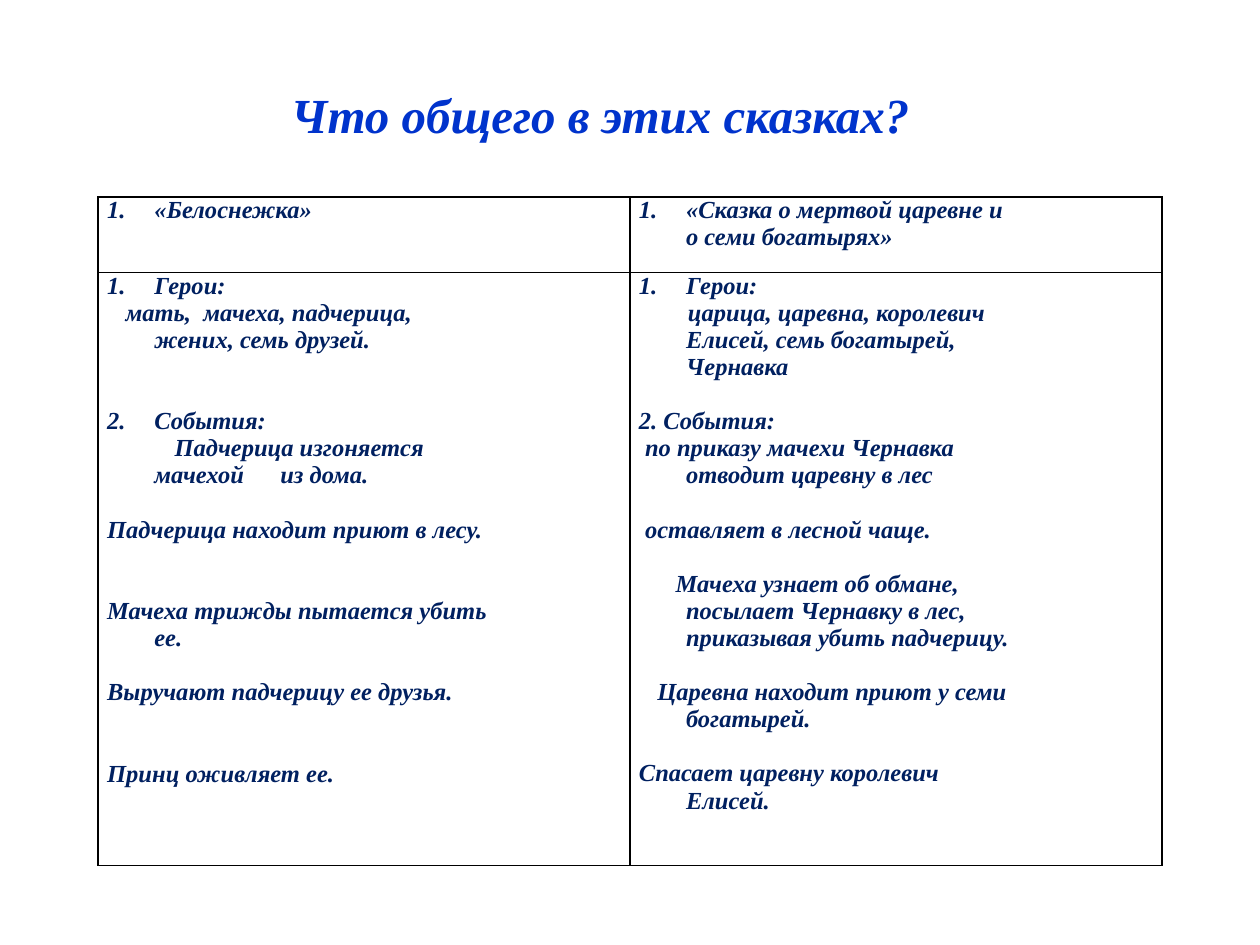
from lxml.etree import SubElement as Sub
from pptx import Presentation
from pptx.dml.color import RGBColor
from pptx.enum.text import PP_ALIGN as Align
from pptx.oxml.ns import qn
from pptx.util import Cm, Pt

BLUE = RGBColor(0x00, 0x33, 0xCC)
NAVY = RGBColor(0x00, 0x20, 0x60)
FONT = "Times New Roman"
LINE = 15.5   # height of a 14 pt line, in points
STEP = 3.5    # width of a 14 pt space, in points
HANG = Cm(0.95)

TITLE = "Что общего в этих сказках?"
# Each paragraph: text, number (0 for none), lines of gap above,
# shift of the first line in spaces
CELLS = [
    [
        [("«Белоснежка»", 1, 0, 0)],
        [("«Сказка о мертвой царевне и о семи богатырях»", 1, 0, 0)],
    ],
    [
        [
            ("Герои:", 1, 0, 0),
            ("мать,  мачеха, падчерица, жених, семь друзей.", 0, 0, 3),
            ("События:", 2, 2, 0),
            ("Падчерица изгоняется мачехой\tиз дома.", 0, 0, 11),
            ("Падчерица находит приют в лесу.", 0, 1, 0),
            ("Мачеха трижды пытается убить ее.", 0, 2, 0),
            ("Выручают падчерицу ее друзья.", 0, 1, 0),
            ("Принц оживляет ее.", 0, 2, 0),
        ],
        [
            ("Герои:", 1, 0, 0),
            ("царица, царевна, королевич Елисей, семь богатырей, Чернавка", 0, 0, 8),
            ("2. События:", 0, 1, 0),
            ("по приказу мачехи Чернавка отводит царевну в лес", 0, 0, 1),
            ("оставляет в лесной чаще.", 0, 1, 1),
            ("Мачеха узнает об обмане, посылает Чернавку в лес, "
             "приказывая убить падчерицу.", 0, 1, 6),
            ("Царевна находит приют у семи богатырей.", 0, 1, 3),
            ("Спасает царевну королевич Елисей.", 0, 1, 0),
        ],
    ],
]


def style(para, size, color):
    for run in para.runs:
        font = run.font
        font.name, font.size = FONT, Pt(size)
        font.bold = font.italic = True
        font.color.rgb = color


def write(para, text, num, gap, shift):
    para.text = text
    if gap:
        para.space_before = Pt(gap * LINE)
    props = para._p.get_or_add_pPr()
    props.set("marL", str(HANG))
    props.set("indent", str(Pt(shift * STEP) - HANG))
    if num:
        Sub(props, qn("a:buFont"), typeface=FONT)
        Sub(props, qn("a:buAutoNum"), type="arabicPeriod", startAt=str(num))
    else:
        Sub(props, qn("a:buNone"))
    if "\t" in text:
        tabs = Sub(props, qn("a:tabLst"))
        Sub(tabs, qn("a:tab"), pos=str(Cm(4.35)), algn="l")
    style(para, 14, NAVY)


def frame(cell):
    """Black border on all four sides, no fill."""
    props = cell._tc.get_or_add_tcPr()
    for side in ("lnL", "lnR", "lnT", "lnB"):
        line = Sub(props, qn("a:" + side), w=str(Pt(1)))
        Sub(Sub(line, qn("a:solidFill")), qn("a:srgbClr"), val="000000")
    cell.fill.background()


def main():
    prs = Presentation()
    prs.slide_width, prs.slide_height = Cm(25.4), Cm(19.05)
    slide = prs.slides.add_slide(prs.slide_layouts[6])

    table = slide.shapes.add_table(
        2, 2, Cm(1.98), Cm(3.97), Cm(21.44), Cm(13.48)).table
    table.first_row = table.horz_banding = False
    for row, high in zip(table.rows, (1.52, 11.96)):
        row.height = Cm(high)
    for r, row in enumerate(CELLS):
        for c, paras in enumerate(row):
            cell = table.cell(r, c)
            cell.margin_left, cell.margin_right = Cm(0.18), Cm(2.86)
            cell.margin_top = cell.margin_bottom = 0
            frame(cell)
            text = cell.text_frame
            for i, item in enumerate(paras):
                write(text.add_paragraph() if i else text.paragraphs[0], *item)

    box = slide.shapes.add_textbox(Cm(2.97), Cm(1.57), Cm(18.26), Cm(2.24))
    box.text_frame.word_wrap = True
    head = box.text_frame.paragraphs[0]
    head.text = TITLE
    head.alignment = Align.CENTER
    style(head, 28, BLUE)

    prs.save("out.pptx")


if __name__ == "__main__":
    main()
